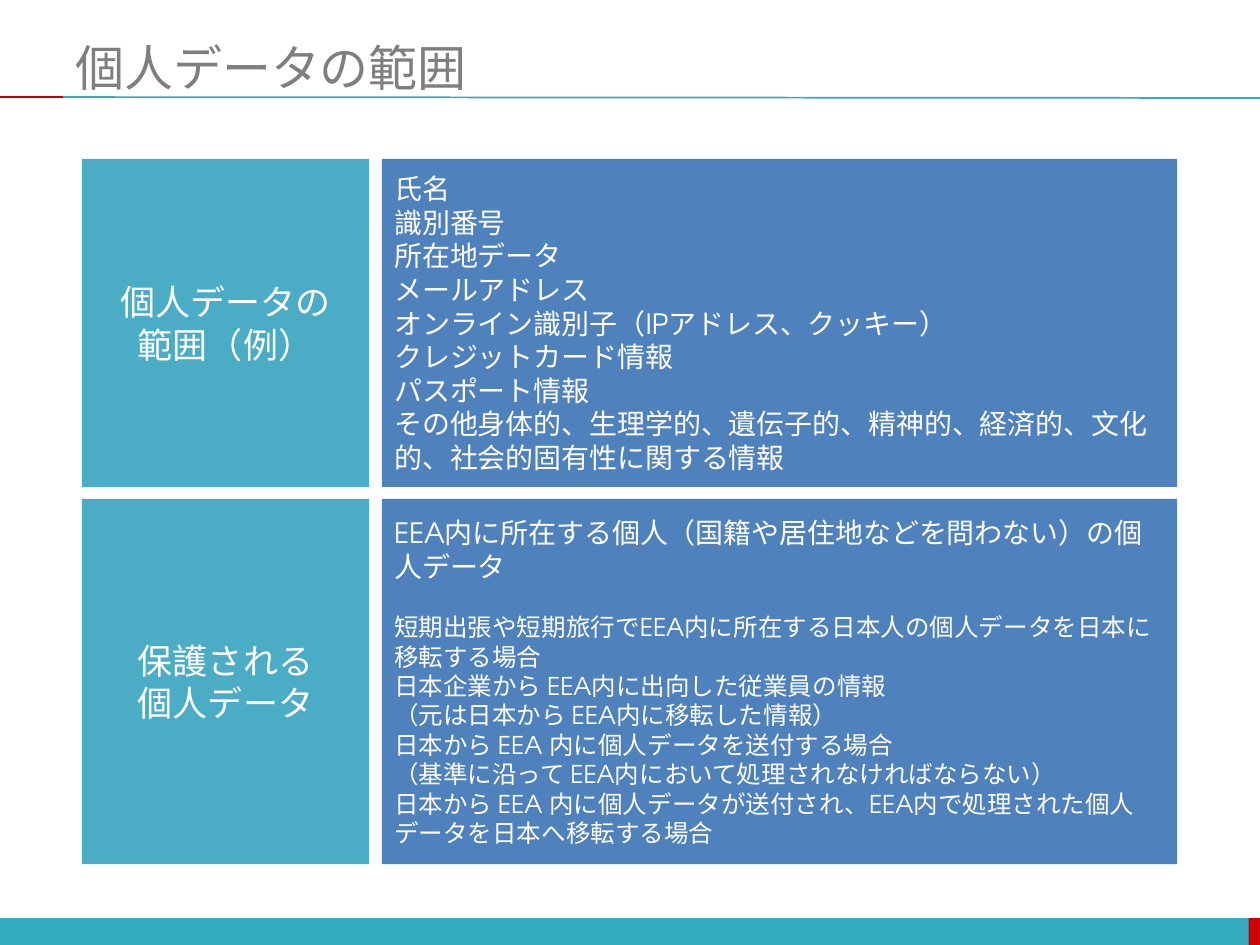
import pptx
import pptx.dml.color
import pptx.enum.shapes
import pptx.enum.text
import pptx.util
import lxml.etree

FONT = "TeX Gyre Adventor"
WHITE, GREY = "FFFFFF", "7F7F7F"
TEAL, RED = "33ACBD", "CC0000"
LABEL_FILL, DETAIL_FILL = "4BACC6", "4F81BD"
LABEL_LEFT, LABEL_WIDTH = 46.8, 164.2
DETAIL_LEFT, DETAIL_WIDTH = 218.2, 454.5
FIRST_TOP, ROW_GAP = 90.8, 6.8
LEFT = pptx.enum.text.PP_ALIGN.LEFT
CENTER = pptx.enum.text.PP_ALIGN.CENTER

ROWS = [
    (187.5, ["個人データの\v範囲（例）"], [
        "氏名",
        "識別番号",
        "所在地データ",
        "メールアドレス",
        "オンライン識別子（IPアドレス、クッキー）",
        "クレジットカード情報",
        "パスポート情報",
        "その他身体的、生理学的、遺伝子的、精神的、経済的、文化的、社会的固有性に関する情報",
    ], []),
    (208.7, ["保護される", "個人データ"], [
        "EEA内に所在する個人（国籍や居住地などを問わない）の個人データ",
    ], [
        "短期出張や短期旅行でEEA内に所在する日本人の個人データを日本に移転する場合",
        "日本企業から EEA内に出向した従業員の情報",
        "（元は日本から EEA内に移転した情報）",
        "日本から EEA 内に個人データを送付する場合",
        "（基準に沿って EEA内において処理されなければならない）",
        "日本から EEA 内に個人データが送付され、EEA内で処理された個人データを日本へ移転する場合",
    ]),
]


def color(value):
    """Return the RGB colour for a hex string."""
    return pptx.dml.color.RGBColor.from_string(value)


def points(*values):
    """Return the values as lengths in points."""
    return [pptx.util.Pt(value) for value in values]


def add_block(page, left, top, width, height, fill):
    """Add a plain filled rectangle."""
    block = page.shapes.add_shape(
        pptx.enum.shapes.MSO_SHAPE.RECTANGLE, *points(left, top, width, height))
    block.shadow.inherit = False
    block.fill.solid()
    block.fill.fore_color.rgb = color(fill)
    block.line.fill.background()
    return block


def add_rule(page, start_x, start_y, end_x, end_y, stroke):
    """Add a thin straight line without a shadow."""
    rule = page.shapes.add_connector(
        pptx.enum.shapes.MSO_CONNECTOR.STRAIGHT,
        *points(start_x, start_y, end_x, end_y))
    rule.line.color.rgb = color(stroke)
    rule.line.width = pptx.util.Pt(1)
    lxml.etree.SubElement(
        rule._element.spPr, pptx.oxml.ns.qn("a:effectLst"))


def write_text(box, lines, fill, align):
    """Write (text, size, space before) lines, centred vertically in a box."""
    frame = box.text_frame
    frame.word_wrap = True
    frame.vertical_anchor = pptx.enum.text.MSO_ANCHOR.MIDDLE
    for index, (text, size, space) in enumerate(lines):
        para = frame.add_paragraph() if index else frame.paragraphs[0]
        para.text = text
        para.alignment = align
        if space:
            para.space_before = pptx.util.Pt(space)
        para.font.name = FONT
        para.font.size = pptx.util.Pt(size)
        para.font.color.rgb = color(fill)


def add_title(page, text):
    """Add the slide title and the rule beneath it."""
    add_rule(page, 36, 55.5, 720, 56, TEAL)
    add_rule(page, 0, 55.5, 36, 55.5, RED)
    box = page.shapes.add_textbox(*points(36, 21.6, 684, 33.1))
    write_text(box, [(text, 28, 0)], GREY, LEFT)


def add_row(page, top, height, labels, items, cases):
    """Add a label block and its detail block side by side."""
    label = add_block(page, LABEL_LEFT, top, LABEL_WIDTH, height, LABEL_FILL)
    write_text(label, [(text, 20, 0) for text in labels], WHITE, CENTER)
    detail = add_block(page, DETAIL_LEFT, top, DETAIL_WIDTH, height, DETAIL_FILL)
    lines = [(text, 16, 0) for text in items]
    lines += [(text, 14, 0 if index else 16.8) for index, text in enumerate(cases)]
    write_text(detail, lines, WHITE, LEFT)


def main():
    """Build the slide and save it."""
    deck = pptx.Presentation()
    deck.slide_width, deck.slide_height = points(720, 540)
    page = deck.slides.add_slide(deck.slide_layouts[6])
    add_block(page, 0, 524.6, 720, 15.4, TEAL)
    add_block(page, 713.5, 524.6, 6.5, 15.4, RED)
    add_title(page, "個人データの範囲")
    top = FIRST_TOP
    for height, labels, items, cases in ROWS:
        add_row(page, top, height, labels, items, cases)
        top += height + ROW_GAP
    deck.save("out.pptx")


if __name__ == "__main__":
    main()
